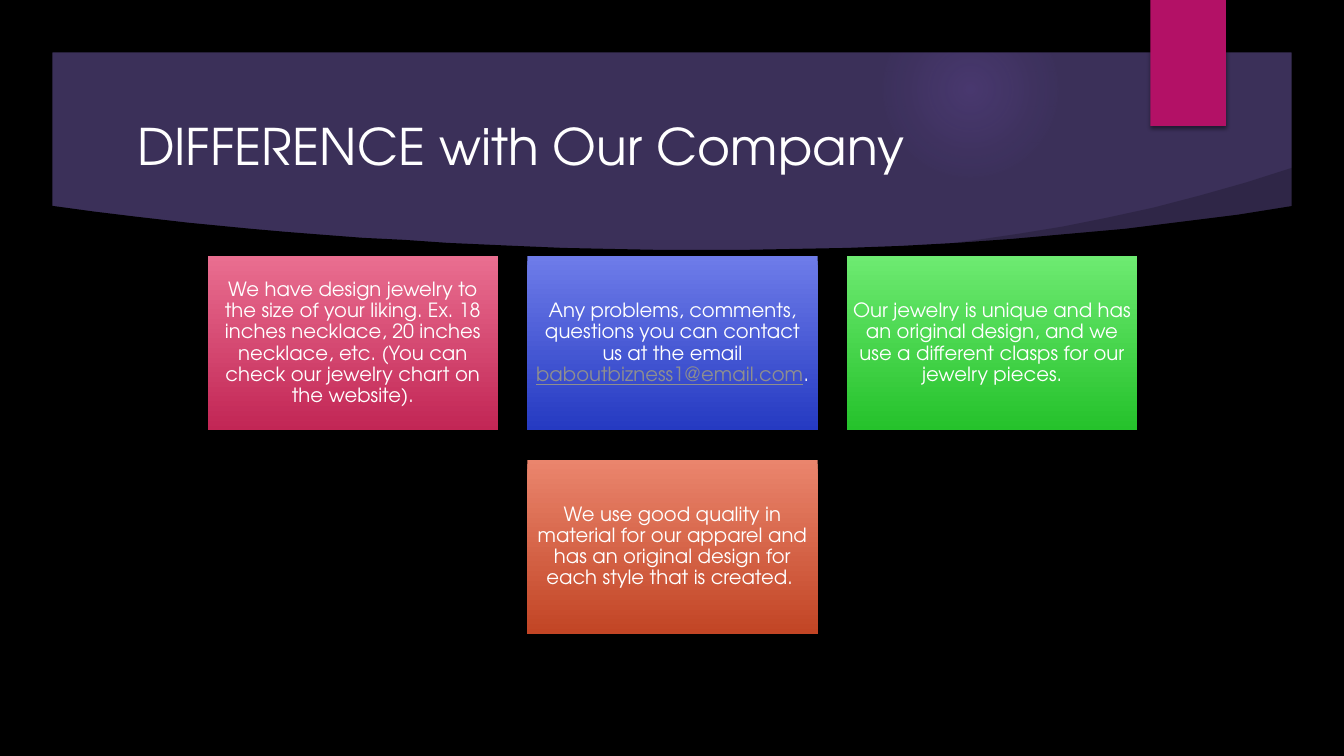
from pptx import Presentation
from pptx.dml.color import RGBColor
from pptx.enum.shapes import MSO_SHAPE
from pptx.enum.text import MSO_ANCHOR, MSO_AUTO_SIZE, PP_ALIGN
from pptx.oxml import parse_xml
from pptx.oxml.ns import nsdecls, qn
from pptx.util import Inches, Pt

RECTANGLE, OVAL = MSO_SHAPE.RECTANGLE, MSO_SHAPE.OVAL
MIDDLE, NO_FIT = MSO_ANCHOR.MIDDLE, MSO_AUTO_SIZE.NONE
LEFT, CENTER = PP_ALIGN.LEFT, PP_ALIGN.CENTER

THEME = {
    "font": "TeX Gyre Adventor",
    "title_size": 36,
    "card_size": 14,
    "banner": "3B3059",
    "glow": "9B6BF2",
    "black": "000000",
    "white": "FFFFFF",
    "ribbon": "B31166",
    "link": "8F8F8F",
    "pink": ("E96E90", "C22655"),
    "blue": ("6E7CE9", "253AC2"),
    "green": ("6DEA71", "25C22B"),
    "orange": ("EA856D", "C24525"),
}


def write(para, text, size, color=THEME["white"], underline=None):
    span = para.add_run()
    span.text = text
    span.font.name = THEME["font"]
    span.font.size = Pt(size)
    span.font.color.rgb = RGBColor.from_string(color)
    span.font.underline = underline


def draw_outline(*contours):
    builder = None
    for contour in contours:
        points = [(Inches(x), Inches(y)) for x, y in contour]
        if builder is None:
            builder = slide.shapes.build_freeform(*points[0])
        else:
            builder.move_to(*points[0])
        builder.add_line_segments(points[1:], close=True)
    outline = builder.convert_to_shape()
    outline.shadow.inherit = False
    outline.line.fill.background()
    outline.fill.solid()
    outline.fill.fore_color.rgb = RGBColor.from_string(THEME["black"])
    return outline


deck = Presentation()
deck.slide_width = Inches(13.33)
deck.slide_height = Inches(7.5)
slide = deck.slides.add_slide(deck.slide_layouts[5])
slide.background.fill.solid()
slide.background.fill.fore_color.rgb = RGBColor.from_string(THEME["banner"])

glow = slide.shapes.add_shape(OVAL, Inches(8.75), Inches(0.01), Inches(1.75), Inches(1.75))
glow.shadow.inherit = False
glow.line.fill.background()
glow.fill.background()
stops = "".join(
    f'<a:gs pos="{position}000"><a:srgbClr val="{THEME["glow"]}">'
    f'<a:alpha val="{alpha}000"/></a:srgbClr></a:gs>'
    for position, alpha in ((0, 14), (36, 7), (73, 0))
)
glow_fill = parse_xml(
    f'<a:gradFill {nsdecls("a")}><a:gsLst>{stops}</a:gsLst><a:path path="circle">'
    '<a:fillToRect l="50000" t="50000" r="50000" b="50000"/></a:path></a:gradFill>'
)
glow_properties = glow.element.spPr
glow_properties.replace(glow_properties.find(qn("a:noFill")), glow_fill)

fold = draw_outline([
    (9.34, 2.5), (10.3, 2.47), (11.4, 2.36), (12.89, 2.14), (12.83, 1.66),
    (12.36, 1.81), (11.9, 1.94), (11.44, 2.06), (10.98, 2.16), (10.53, 2.25),
    (10.1, 2.32), (9.69, 2.38), (9.3, 2.43),
])
fold_color = fold.element.spPr.find(qn("a:solidFill"))[0]
fold_color.append(parse_xml(f'<a:alpha {nsdecls("a")} val="20000"/>'))

draw_outline([
    (0.5, 2.04), (0.5, 7), (12.84, 7), (12.84, 2.04), (12.28, 2.13), (11.72, 2.2),
    (11.16, 2.27), (10.6, 2.32), (10.04, 2.37), (9.49, 2.41), (8.94, 2.44),
    (8.4, 2.46), (7.86, 2.47), (7.34, 2.48), (6.57, 2.48), (6.07, 2.47),
    (5.59, 2.46), (5.11, 2.44), (4.44, 2.41), (4.01, 2.38), (3.6, 2.36),
    (3.21, 2.33), (2.83, 2.3), (2.49, 2.27), (1.87, 2.21), (1.35, 2.15), (0.94, 2.1),
])
draw_outline(
    [(0, 0), (0, 7.5), (13.33, 7.5), (13.33, 0)],
    [(12.81, 6.98), (0.52, 6.98), (0.52, 0.52), (12.81, 0.52)],
)

ribbon = slide.shapes.add_shape(RECTANGLE, Inches(11.41), 0, Inches(0.75), Inches(1.25))
ribbon.fill.solid()
ribbon.fill.fore_color.rgb = RGBColor.from_string(THEME["ribbon"])

title = slide.shapes.title
title.element.getparent().append(title.element)
title.left, title.top = Inches(1.26), Inches(1.06)
title.width, title.height = Inches(9.58), Inches(0.77)
title.text_frame.auto_size = NO_FIT
title.text_frame.vertical_anchor = MIDDLE
title.text_frame.paragraphs[0].alignment = LEFT
write(title.text_frame.paragraphs[0], "DIFFERENCE with Our Company", size=THEME["title_size"])

CARD_WIDTH, CARD_HEIGHT, GAP = 2.88, 1.73, 0.29
CARDS_LEFT, CARDS_TOP = 2.06, 2.54
CARDS = [
    (0, 0, "pink", [
        ("We have design jewelry to the size of your liking. Ex. 18 inches necklace, "
         "20 inches necklace, etc. (You can check our jewelry chart on the website).", {}),
    ]),
    (1, 0, "blue", [
        ("Any problems, comments, questions you can contact us at the email ", {}),
        ("baboutbizness1@email.com", {"color": THEME["link"], "underline": True}),
        (".", {}),
    ]),
    (2, 0, "green", [
        ("Our jewelry is unique and has an original design, and we use a different "
         "clasps for our jewelry pieces.", {}),
    ]),
    (1, 1, "orange", [
        ("We use good quality in material for our apparel and has an original design "
         "for each style that is created. ", {}),
    ]),
]

raised = [ribbon]
for column, row, palette, spans in CARDS:
    card = slide.shapes.add_shape(
        RECTANGLE,
        Inches(CARDS_LEFT + column * (CARD_WIDTH + GAP)),
        Inches(CARDS_TOP + row * (CARD_HEIGHT + GAP)),
        Inches(CARD_WIDTH),
        Inches(CARD_HEIGHT),
    )
    card.fill.gradient()
    card.fill.gradient_angle = 270
    for stop, color in zip(card.fill.gradient_stops, THEME[palette]):
        stop.color.rgb = RGBColor.from_string(color)
    frame = card.text_frame
    frame.word_wrap = True
    frame.vertical_anchor = MIDDLE
    frame.margin_left = frame.margin_right = Inches(0.06)
    frame.margin_top = frame.margin_bottom = Inches(0.06)
    para = frame.paragraphs[0]
    para.alignment = CENTER
    para.line_spacing = 0.9
    for text, style in spans:
        write(para, text, size=THEME["card_size"], **style)
    raised.append(card)

for shape in raised:
    shape.line.fill.background()
    shape.shadow.inherit = False
    shape.element.spPr.find(qn("a:effectLst")).append(parse_xml(
        f'<a:outerShdw {nsdecls("a")} blurRad="{Pt(3)}" dist="{Pt(2)}" dir="5400000" '
        f'rotWithShape="0"><a:srgbClr val="{THEME["black"]}"><a:alpha val="45000"/>'
        '</a:srgbClr></a:outerShdw>'
    ))

deck.save("out.pptx")
